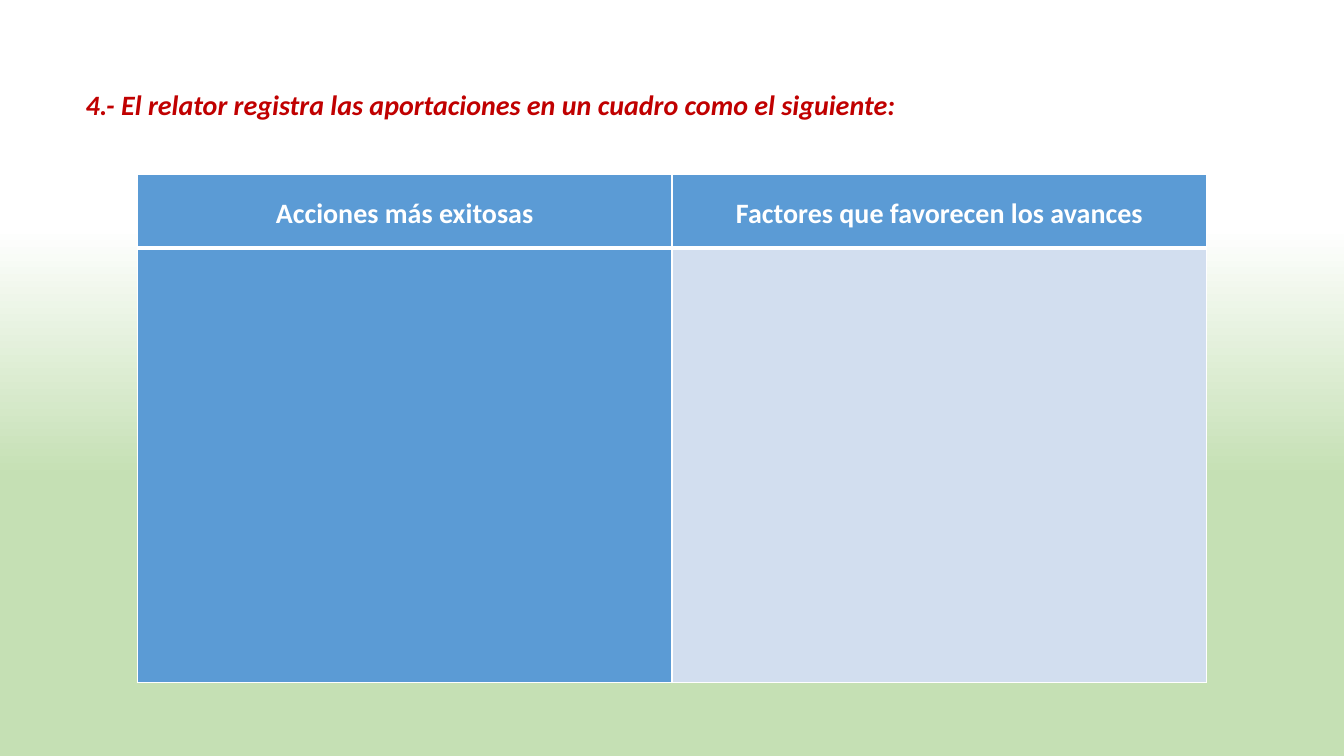
from dataclasses import dataclass

from lxml.etree import SubElement
from pptx import Presentation
from pptx.dml.color import RGBColor
from pptx.enum.text import MSO_ANCHOR, MSO_AUTO_SIZE, PP_ALIGN
from pptx.oxml.ns import qn
from pptx.util import Pt


@dataclass(frozen=True)
class Theme:
    font: str = "Calibri"
    text_size: float = 20
    line_spacing: float = 1.15
    heading: str = "C00000"
    white: str = "FFFFFF"
    blue: str = "5B9BD5"
    pale_blue: str = "D2DEEF"
    green: str = "C5E0B4"
    thin_line: float = 1
    thick_line: float = 3


class SlideBuilder:
    def __init__(self, deck, theme):
        self.theme = theme
        self.slide = deck.slides.add_slide(deck.slide_layouts[5])

    def background(self, stops):
        """Fill the slide from top to bottom with (position, colour) stops."""
        fill = self.slide.background.fill
        fill.gradient()
        fill.gradient_angle = 270
        for stop, (position, color) in zip(fill.gradient_stops, stops):
            stop.position = position
            stop.color.rgb = RGBColor.from_string(color)

    def add_text(self, paragraph, text, color, align, italic=False):
        paragraph.alignment = align
        paragraph.line_spacing = self.theme.line_spacing
        run = paragraph.add_run()
        run.text = text
        run.font.name = self.theme.font
        run.font.size = Pt(self.theme.text_size)
        run.font.bold = True
        run.font.italic = italic
        run.font.color.rgb = RGBColor.from_string(color)

    def title(self, text, left, top, width, height):
        heading = self.slide.shapes.title
        heading.left, heading.top = Pt(left), Pt(top)
        heading.width, heading.height = Pt(width), Pt(height)
        frame = heading.text_frame
        frame.word_wrap = True
        frame.auto_size = MSO_AUTO_SIZE.SHAPE_TO_FIT_TEXT
        frame.vertical_anchor = MSO_ANCHOR.TOP
        paragraph = frame.paragraphs[0]
        paragraph.space_before = Pt(0)
        paragraph.space_after = Pt(10)
        self.add_text(paragraph, text, self.theme.heading, PP_ALIGN.LEFT, italic=True)

    def borders(self, cell, top, bottom):
        """Draw white cell edges; top and bottom are widths in points."""
        properties = cell._tc.get_or_add_tcPr()
        thin = self.theme.thin_line
        edges = {"L": thin, "R": thin, "T": top, "B": bottom}
        for index, (side, width) in enumerate(edges.items()):
            line = SubElement(properties, qn(f"a:ln{side}"), w=str(Pt(width)))
            color = SubElement(SubElement(line, qn("a:solidFill")), qn("a:srgbClr"))
            color.set("val", self.theme.white)
            properties.insert(index, line)

    def table(self, headers, body_fills, left, top, column_width, row_heights):
        theme = self.theme
        grid = self.slide.shapes.add_table(
            len(row_heights), len(headers), Pt(left), Pt(top),
            Pt(column_width * len(headers)), Pt(sum(row_heights))).table
        grid.horz_banding = False
        for row, height in zip(grid.rows, row_heights):
            row.height = Pt(height)
        for column, (header, body_fill) in enumerate(zip(headers, body_fills)):
            grid.columns[column].width = Pt(column_width)
            head, body = grid.cell(0, column), grid.cell(1, column)
            for cell, color in ((head, theme.blue), (body, body_fill)):
                cell.fill.solid()
                cell.fill.fore_color.rgb = RGBColor.from_string(color)
            self.borders(head, theme.thin_line, theme.thick_line)
            self.borders(body, theme.thick_line, theme.thin_line)
            head.vertical_anchor = MSO_ANCHOR.MIDDLE
            head.margin_left = head.margin_right = Pt(5)
            head.margin_top = head.margin_bottom = Pt(0)
            self.add_text(head.text_frame.paragraphs[0], header, theme.white, PP_ALIGN.CENTER)


def main():
    theme = Theme()
    deck = Presentation()
    deck.slide_width, deck.slide_height = Pt(960), Pt(540)
    page = SlideBuilder(deck, theme)
    page.background([(0.30, theme.white), (0.63, theme.green)])
    page.table(["Acciones más exitosas", "Factores que favorecen los avances"],
               [theme.blue, theme.pale_blue],
               left=98, top=124.5, column_width=382, row_heights=[52.5, 310.5])
    page.title("4.- El relator registra las aportaciones en un cuadro como el siguiente:",
               left=54, top=55.5, width=763, height=34)
    deck.save("out.pptx")


if __name__ == "__main__":
    main()
